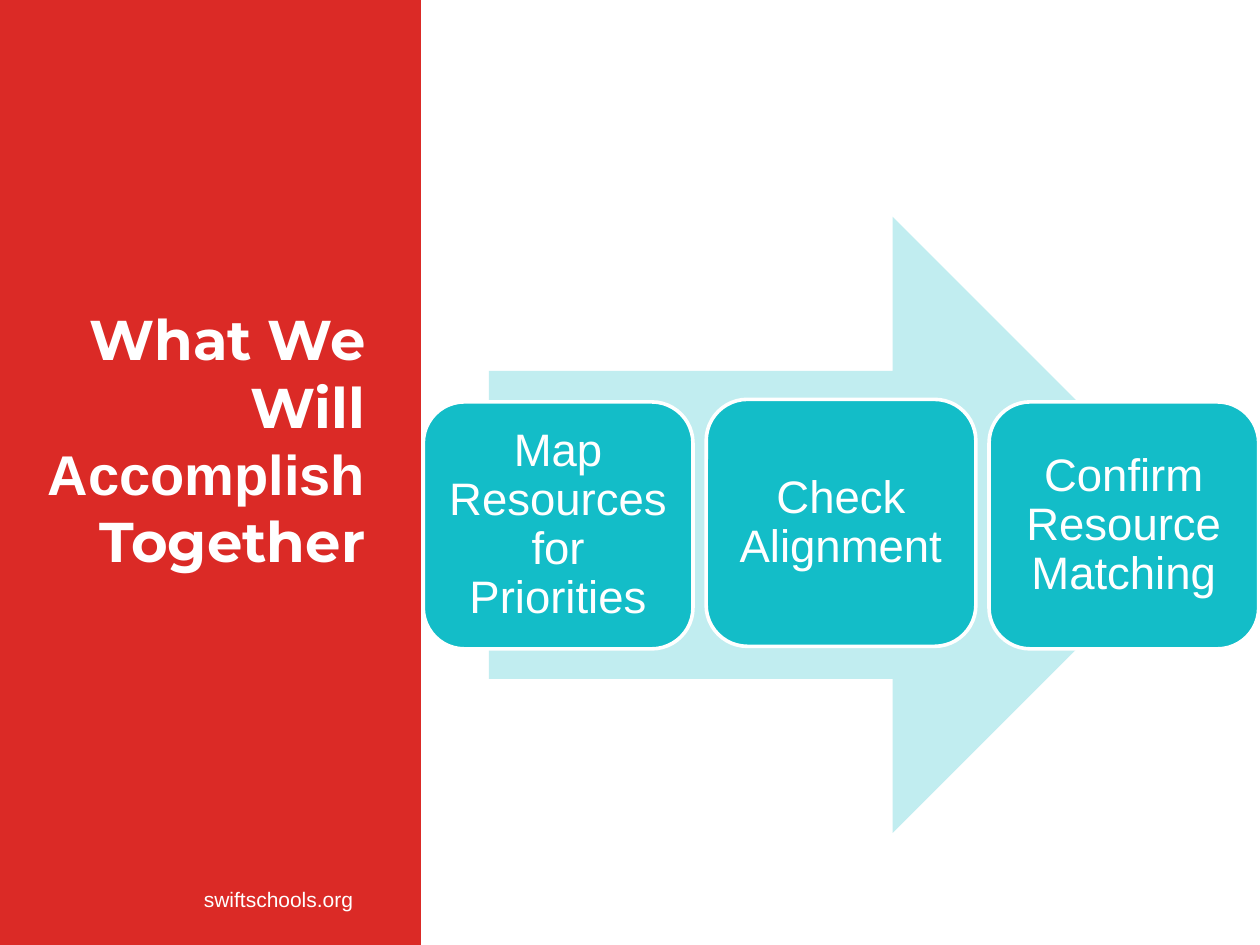
from lxml.etree import SubElement
from pptx import Presentation
from pptx.dml.color import RGBColor
from pptx.enum.shapes import MSO_SHAPE
from pptx.enum.text import MSO_ANCHOR, PP_ALIGN
from pptx.oxml.ns import qn
from pptx.util import Inches, Pt

RED = RGBColor(0xDB, 0x2A, 0x26)
TEAL = RGBColor(0x13, 0xBD, 0xC8)
WHITE = RGBColor(0xFF, 0xFF, 0xFF)
BODY, DISPLAY = "Arial", "Montserrat"
COLS, ROWS = 100, 75


class Deck:
    """Holds the style and the current slide; lengths are grid columns and rows."""

    def __init__(self):
        self.prs = Presentation()
        self.prs.slide_width, self.prs.slide_height = Inches(10), Inches(7.5)
        self.s = self.prs.slides.add_slide(self.prs.slide_layouts[6])

    def box(self, col, row, cols, rows):
        w, h = self.prs.slide_width, self.prs.slide_height
        return (int(w * col / COLS), int(h * row / ROWS),
                int(w * cols / COLS), int(h * rows / ROWS))

    def shape(self, kind, cell, fill, line=None, alpha=None):
        sp = self.s.shapes.add_shape(kind, *self.box(*cell))
        sp.shadow.inherit = False
        sp.fill.solid()
        sp.fill.fore_color.rgb = fill
        if line is None:
            sp.line.fill.background()
        else:
            sp.line.color.rgb = line
            sp.line.width = Pt(2.08)
        if alpha is not None:
            color = sp._element.spPr.find(qn("a:solidFill"))[0]
            SubElement(color, qn("a:alpha"), val=str(alpha * 1000))
        return sp

    def add_runs(self, sp, runs, size, align, bold=False):
        tf = sp.text_frame
        tf.word_wrap = True
        p = tf.paragraphs[0]
        p.alignment = align
        for text, font in runs:
            r = p.add_run()
            r.text = text
            r.font.name, r.font.size, r.font.bold = font, Pt(size), bold
            r.font.color.rgb = WHITE
        return tf

    def text(self, cell, runs, size, align, bold=False):
        sp = self.s.shapes.add_textbox(*self.box(*cell))
        self.add_runs(sp, runs, size, align, bold)

    def step(self, cell, label):
        sp = self.shape(MSO_SHAPE.ROUNDED_RECTANGLE, cell, TEAL, WHITE)
        tf = self.add_runs(sp, [(label, BODY)], 26, PP_ALIGN.CENTER)
        tf.vertical_anchor = MSO_ANCHOR.MIDDLE
        tf.margin_left = tf.margin_right = Inches(0.1)
        tf.margin_top = tf.margin_bottom = Inches(0.1)
        tf.paragraphs[0].line_spacing = 0.9


def main():
    deck = Deck()

    # Red side panel with site address and title
    deck.shape(MSO_SHAPE.RECTANGLE, (0, 0, 33.3, ROWS), RED, RED)
    deck.text((15.2, 69.9, 17.4, 3), [("swiftschools.org", BODY)], 12, PP_ALIGN.LEFT)
    title = [("What We Will ", DISPLAY), ("Accomplish", BODY), (" Together", DISPLAY)]
    deck.text((0, 23.7, 30, 22.6), title, 32, PP_ALIGN.RIGHT, bold=True)

    # Process arrow behind the steps
    deck.shape(MSO_SHAPE.RIGHT_ARROW, (38.8, 17.2, 56.5, 48.9), TEAL, alpha=26)

    # Three evenly spaced steps, the middle one slightly raised
    steps = [("Map Resources for Priorities", 31.9),
             ("Check Alignment", 31.7),
             ("Confirm Resource Matching", 31.9)]
    for i, (label, row) in enumerate(steps):
        deck.step((33.6 + 22.45 * i, row, 21.4, 19.6), label)

    deck.prs.save("out.pptx")


if __name__ == "__main__":
    main()
